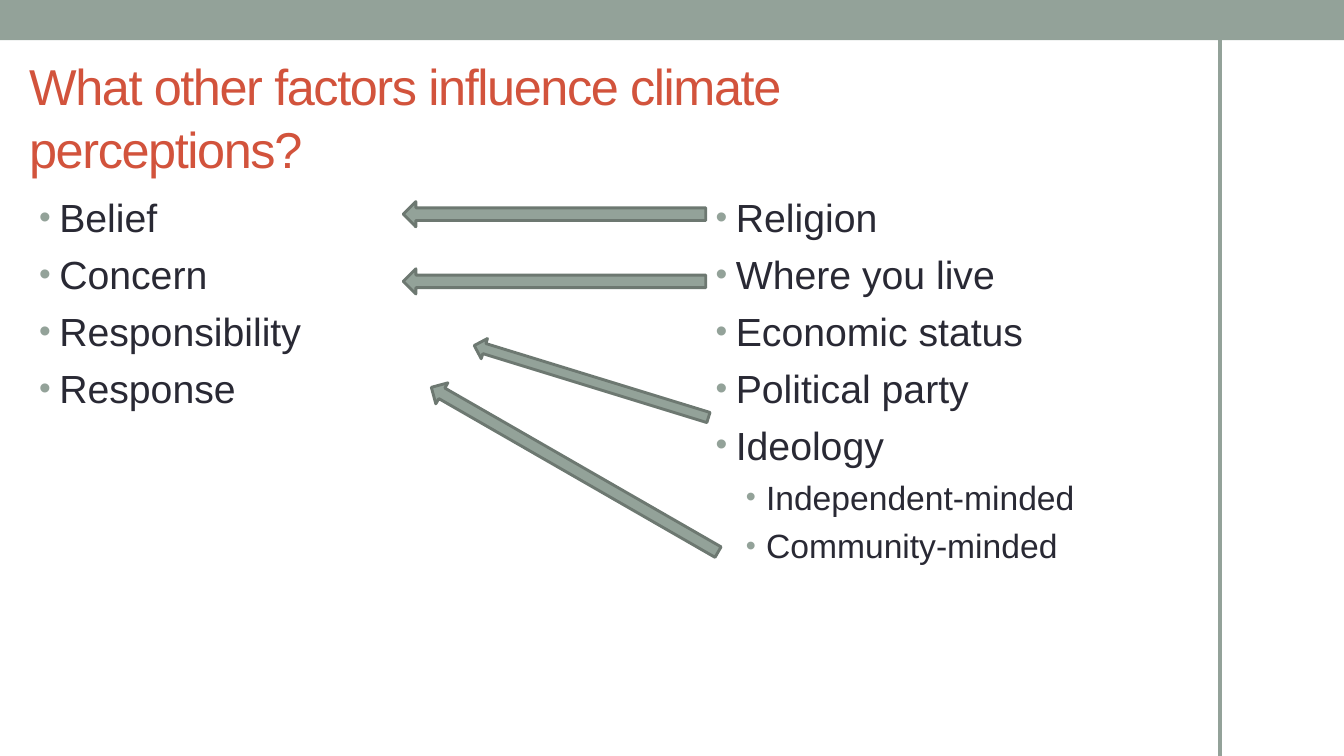
from lxml import etree
from pptx import Presentation
from pptx.dml.color import RGBColor
from pptx.enum.shapes import MSO_CONNECTOR, MSO_SHAPE
from pptx.enum.text import MSO_ANCHOR
from pptx.oxml.ns import qn
from pptx.util import Inches, Pt

RECTANGLE = MSO_SHAPE.RECTANGLE
LEFT_ARROW = MSO_SHAPE.LEFT_ARROW
STRAIGHT = MSO_CONNECTOR.STRAIGHT
TOP, MIDDLE = MSO_ANCHOR.TOP, MSO_ANCHOR.MIDDLE

SAGE = RGBColor(0x93, 0xA2, 0x99)
DARK_SAGE = RGBColor(0x6D, 0x78, 0x71)
BRICK = RGBColor(0xD2, 0x53, 0x3C)
INK = RGBColor(0x29, 0x29, 0x34)

# The slide is a grid of 160 columns by 90 rows of square cells
COLUMNS, ROWS = 160, 90
LIST_TOP, LIST_ROWS = 21.96, 61.92
LEVELS = [(28, 7, 0.2), (24, 6, 0.5)]  # size, space before, indent


class FactorsSlide:
    font = "Arial"

    def __init__(self, deck):
        self.cell = deck.slide_height / ROWS
        self.slide = deck.slides.add_slide(deck.slide_layouts[6])

    def grid(self, *cells):
        return [round(count * self.cell) for count in cells]

    def block(self, preset, area, outline=None, rotation=0):
        block = self.slide.shapes.add_shape(preset, *self.grid(*area))
        block.shadow.inherit = False
        block.rotation = rotation
        block.fill.solid()
        block.fill.fore_color.rgb = SAGE
        if outline is None:
            block.line.fill.background()
        else:
            block.line.color.rgb = outline
            block.line.width = Pt(2.08)

    def rule(self, start, end):
        rule = self.slide.shapes.add_connector(STRAIGHT, *self.grid(*start, *end))
        rule.line.color.rgb = SAGE
        rule.line.width = Pt(3.25)
        etree.SubElement(rule._element.spPr, qn("a:effectLst"))

    def frame(self, area, anchor, top_inset):
        frame = self.slide.shapes.add_textbox(*self.grid(*area)).text_frame
        frame.word_wrap = True
        frame.vertical_anchor = anchor
        frame.margin_top = Inches(top_inset)
        return frame

    def style(self, paragraph, size, color):
        for run in paragraph.runs:
            run.font.name = self.font
            run.font.size = Pt(size)
            run.font.color.rgb = color

    def title(self, words, area):
        frame = self.frame(area, MIDDLE, 0.11)
        frame.text = words
        heading = frame.paragraphs[0]
        heading.line_spacing = 1.03
        self.style(heading, 36, BRICK)
        heading.runs[0].font._element.set("spc", "-100")

    def bullet(self, paragraph, indent):
        properties = paragraph._p.get_or_add_pPr()
        properties.set("marL", str(Inches(indent)))
        properties.set("indent", str(-Inches(0.2)))
        color = etree.SubElement(properties, qn("a:buClr"))
        etree.SubElement(color, qn("a:srgbClr"), val=str(SAGE))
        etree.SubElement(properties, qn("a:buSzPct"), val="85000")
        etree.SubElement(properties, qn("a:buFont"), typeface=self.font)
        etree.SubElement(properties, qn("a:buChar"), char="•")

    def bullets(self, items, left, width):
        frame = self.frame((left, LIST_TOP, width, LIST_ROWS), TOP, 0.09)
        frame.text = "\n".join(words for words, _ in items)
        for number, (words, level) in enumerate(items):
            paragraph = frame.paragraphs[number]
            size, gap, indent = LEVELS[level]
            paragraph.level = level
            self.bullet(paragraph, indent)
            if number:
                paragraph.space_before = Pt(gap)
            self.style(paragraph, size, INK)


def main():
    deck = Presentation()
    deck.slide_width, deck.slide_height = Inches(13.33), Inches(7.5)
    factors = FactorsSlide(deck)

    # Top band and side rule
    factors.block(RECTANGLE, (0, 0, COLUMNS, 4.8))
    factors.rule((145.2, 4.56), (145.2, ROWS))

    # Title
    factors.title("What other factors influence climate perceptions?",
                  (2.28, 6.96, 125.4, 12.96))

    # Perceptions on the left, influences on the right
    perceptions = ["Belief", "Concern", "Responsibility", "Response"]
    influences = ["Religion", "Where you live", "Economic status",
                  "Political party", "Ideology"]
    mindsets = ["Independent-minded", "Community-minded"]
    factors.bullets([(words, 0) for words in perceptions], 3.48, 60.36)
    factors.bullets([(words, 0) for words in influences]
                    + [(words, 1) for words in mindsets], 84, 50.04)

    # Arrows from influences to perceptions
    for area, rotation in [
        ((48, 24, 36, 3), 0),
        ((48, 32, 36, 3), 0),
        ((55.8, 44.16, 29.16, 2.52), 17.1),
        ((48.72, 54.48, 39.36, 2.88), 29.9),
    ]:
        factors.block(LEFT_ARROW, area, DARK_SAGE, rotation)

    deck.save("out.pptx")


if __name__ == "__main__":
    main()
